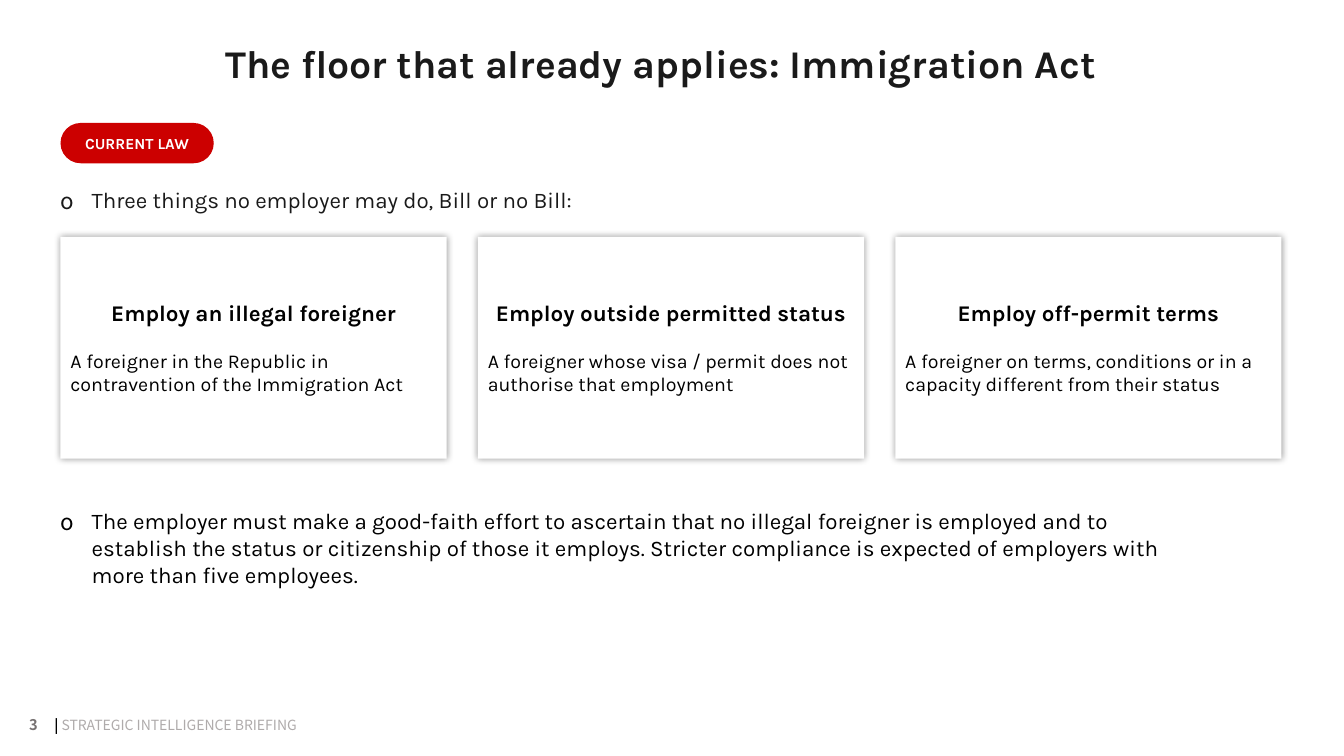
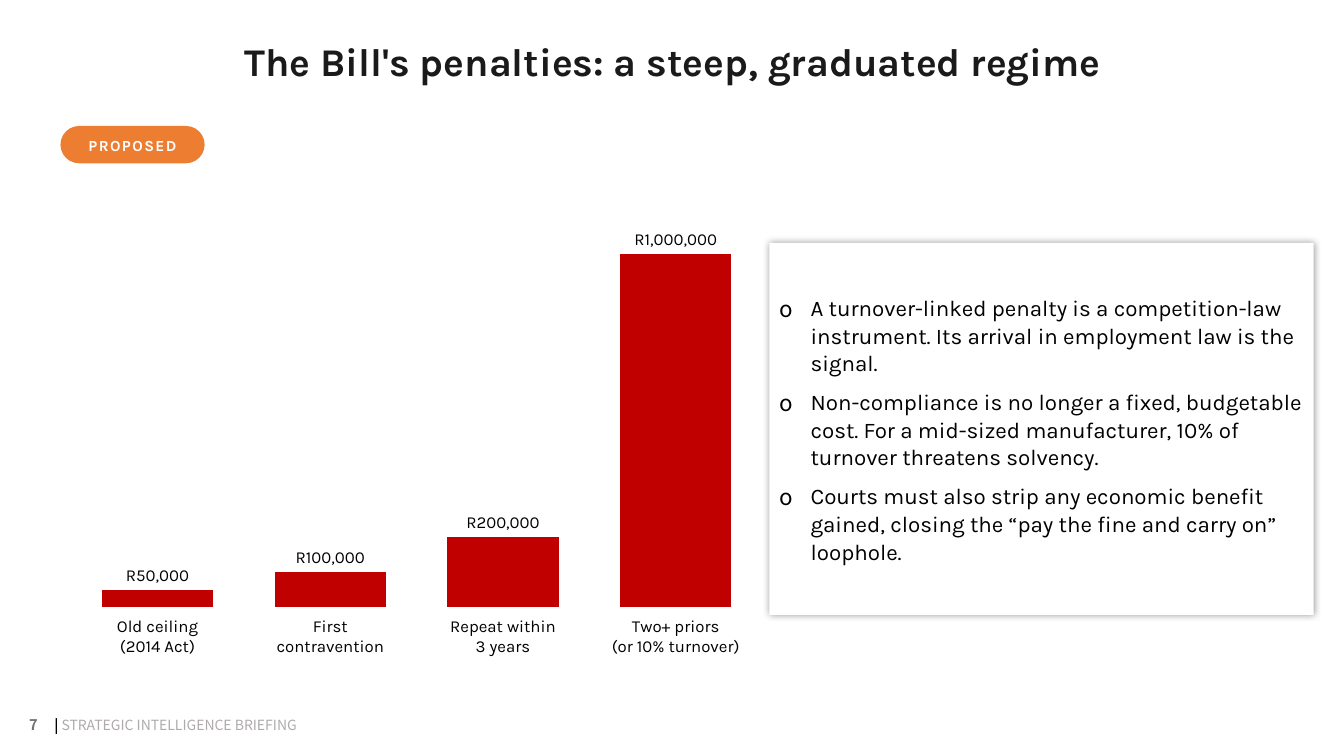
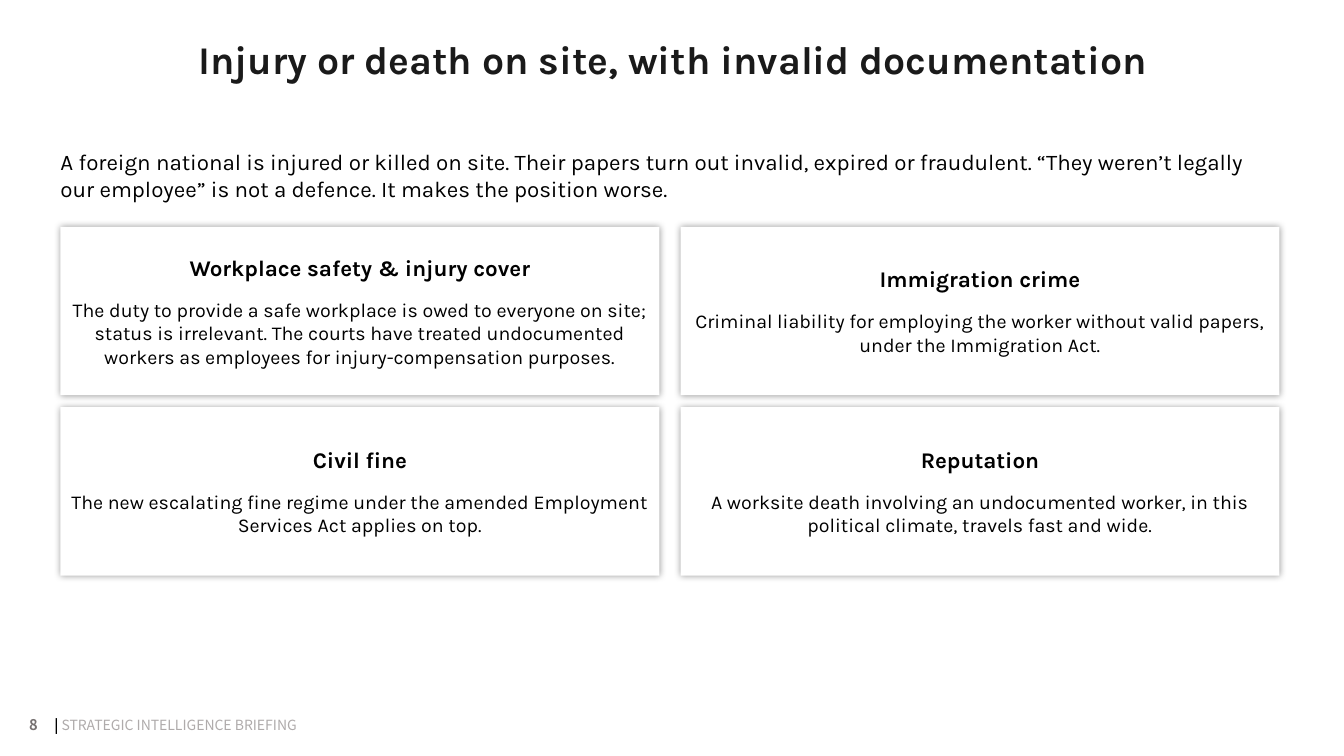
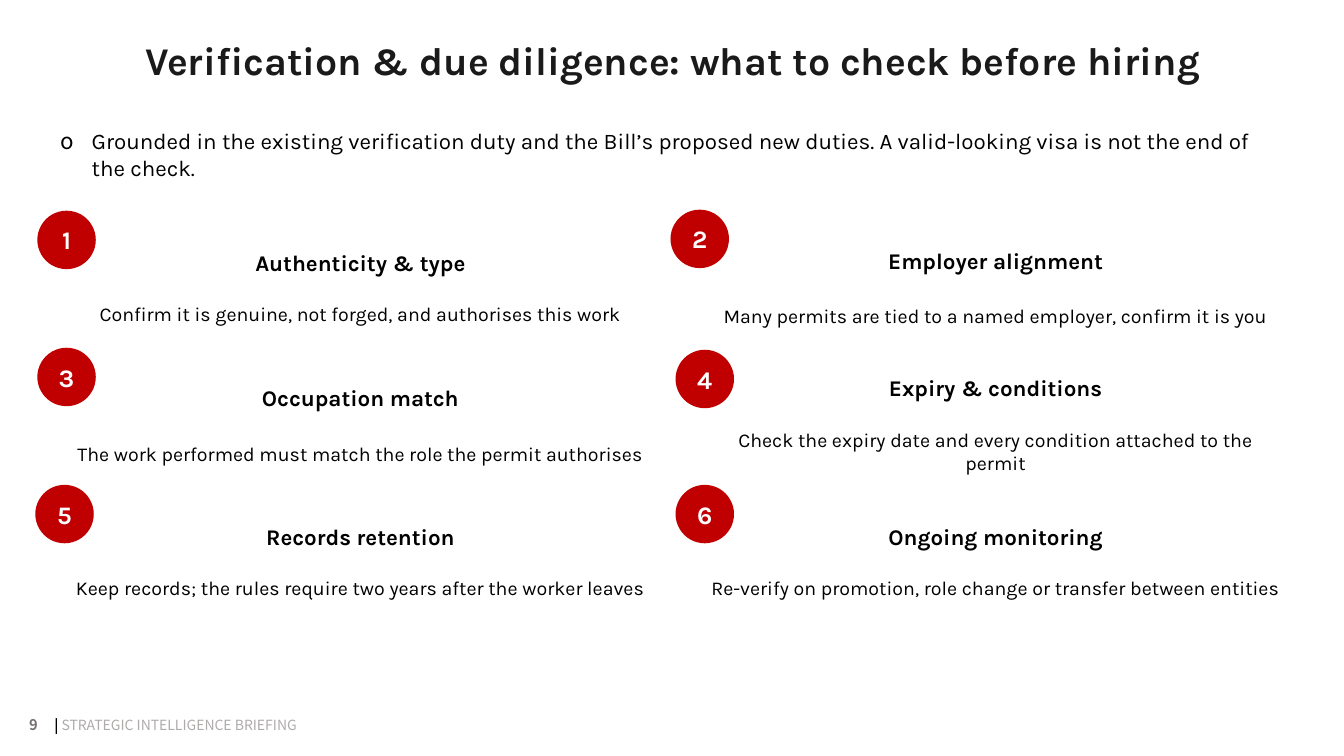
"""Build four slides of a briefing on immigration law duties for employers."""
from pptx import Presentation
from pptx import util as u
from pptx.chart import data as chart_data
from pptx.dml.color import RGBColor
from pptx.enum import chart as charts, shapes, text
from pptx.oxml import ns, parse_xml

PX = 9144
KARLA, NOTO = "Karla", "Noto Sans CJK JP"
WHITE = RGBColor(0xFF, 0xFF, 0xFF)
BLACK = RGBColor(0x00, 0x00, 0x00)
INK = RGBColor(0x1A, 0x1A, 0x1A)
GREY = RGBColor(0x76, 0x71, 0x71)
PALE_GREY = RGBColor(0xAF, 0xAB, 0xAB)
RED = RGBColor(0xCC, 0x00, 0x00)
DARK_RED = RGBColor(0xC0, 0x00, 0x00)
ORANGE = RGBColor(0xED, 0x7D, 0x31)
LEFT, CENTER = text.PP_ALIGN.LEFT, text.PP_ALIGN.CENTER
RECT = shapes.MSO_SHAPE.RECTANGLE
ROUND = shapes.MSO_SHAPE.ROUNDED_RECTANGLE
OVAL = shapes.MSO_SHAPE.OVAL


def write(shape, lines, size, color, bold=False, align=LEFT, font=KARLA, bullet=None,
          before=0, after=0, spacing=None, box=None):
    """Write lines into a shape, and place it with no margins when a box is given."""
    frame = shape.text_frame
    if box:
        shape.left, shape.top, shape.width, shape.height = (v * PX for v in box)
        frame.margin_left = frame.margin_right = frame.margin_top = frame.margin_bottom = 0
    for line in lines:
        paragraph = frame.add_paragraph() if frame.text else frame.paragraphs[0]
        paragraph.text = line
        paragraph.alignment = align
        paragraph.space_before = u.Pt(before)
        paragraph.space_after = u.Pt(0 if line == lines[-1] else after)
        paragraph.line_spacing = spacing
        if bullet is not None:
            props = paragraph._p.get_or_add_pPr()
            props.set("marL", str(31 * PX if bullet else 0))
            props.set("indent", str(-31 * PX if bullet else 0))
            marks = ([f'<a:buFont {ns.nsdecls("a")} typeface="{NOTO}"/>',
                      f'<a:buChar {ns.nsdecls("a")} char="{bullet}"/>'] if bullet
                     else [f'<a:buNone {ns.nsdecls("a")}/>'])
            for mark in marks:
                props.append(parse_xml(mark))
        paragraph.font.name = font
        paragraph.font.size = u.Pt(size)
        paragraph.font.bold = bold
        paragraph.font.color.rgb = color
    frame.word_wrap = True
    frame.auto_size = text.MSO_AUTO_SIZE.NONE


def paint(shape, color, shadowed=False):
    """Fill a shape without an outline, with a soft shadow on request."""
    shape.fill.solid()
    shape.fill.fore_color.rgb = color
    shape.line.fill.background()
    shape.shadow.inherit = False
    if shadowed:
        shape.element.spPr.find(ns.qn("a:effectLst")).append(parse_xml(
            f'<a:outerShdw {ns.nsdecls("a")} blurRad="63500" dist="0" dir="0" algn="ctr" '
            'rotWithShape="0"><a:srgbClr val="000000"><a:alpha val="40000"/></a:srgbClr>'
            '</a:outerShdw>'))


prs = Presentation()
prs.slide_width, prs.slide_height = 1333 * PX, 750 * PX

TITLES = [
    (3, 3, 50, 27, "The floor that already applies: Immigration Act"),
    (7, 1, 62, 25, "The Bill's penalties: a steep, graduated regime"),
    (8, 1, 62, 23, "Injury or death on site, with invalid documentation"),
    (9, 1, 62, 24, "Verification & due diligence: what to check before hiring"),
]
for number, layout, x, y, title in TITLES:
    slide = prs.slides.add_slide(prs.slide_layouts[layout])
    write(slide.shapes.title, [title], 28, INK, True, CENTER, box=(x, y, 1210, 70))
    slide.shapes.title.text_frame.vertical_anchor = text.MSO_ANCHOR.MIDDLE
    page = slide.shapes.add_textbox(19 * PX, 705 * PX, 49 * PX, 29 * PX)
    write(page, [str(number)], 10.5, GREY, True, font=NOTO)
floor, penalties, injury, checks = prs.slides

footer = floor.shapes.add_textbox(44 * PX, 706 * PX, 423 * PX, 27 * PX)
footer.text_frame.word_wrap = True
footer_line = footer.text_frame.paragraphs[0]
footer_line.font.name, footer_line.font.size = NOTO, u.Pt(10)
for words, color, bold in [("| ", BLACK, True), ("STRATEGIC INTELLIGENCE BRIEFING", PALE_GREY, False)]:
    run = footer_line.add_run()
    run.text, run.font.bold, run.font.color.rgb = words, bold, color
footer.element.nvSpPr.cNvPr.set("id", "20")
prs.slide_master.shapes.element.append(footer.element)

BODIES = [
    (floor, 1, (60, 178, 1200, 40), INK, "o", "Three things no employer may do, Bill or no Bill:"),
    (floor, 2, (60, 496, 1121, 94), BLACK, "o",
     "The employer must make a good-faith effort to ascertain that no illegal foreigner is employed "
     "and to establish the status or citizenship of those it employs. Stricter compliance is expected "
     "of employers with more than five employees."),
    (injury, 1, (60, 136, 1185, 75), BLACK, "",
     "A foreign national is injured or killed on site. Their papers turn out invalid, expired or "
     "fraudulent. “They weren’t legally our employee” is not a defence. It makes the position worse."),
    (checks, 1, (60, 130, 1210, 45), BLACK, "o",
     "Grounded in the existing verification duty and the Bill’s proposed new duties. A valid-looking "
     "visa is not the end of the check."),
]
for slide, index, box, color, bullet, words in BODIES:
    body = slide.placeholders[index]
    write(body, [words], 16, color, bullet=bullet, box=box)
    body.text_frame.vertical_anchor = text.MSO_ANCHOR.MIDDLE

for slide, y, w, h, color, status, tracking in [
        (floor, 122, 152, 40, RED, "CURRENT LAW", 0), (penalties, 125, 143, 37, ORANGE, "PROPOSED", 100)]:
    pill = slide.shapes.add_shape(ROUND, 60 * PX, y * PX, w * PX, h * PX)
    pill.adjustments[0] = 0.5
    paint(pill, color)
    write(pill, [status], 11, WHITE, True, CENTER)
    pill.text_frame.vertical_anchor = text.MSO_ANCHOR.TOP
    pill.text_frame.paragraphs[0].runs[0]._r.get_or_add_rPr().set("spc", str(tracking))

PROHIBITIONS = [
    ("Employ an illegal foreigner", "A foreigner in the Republic in contravention of the Immigration Act"),
    ("Employ outside permitted status", "A foreigner whose visa / permit does not authorise that employment"),
    ("Employ off-permit terms",
     "A foreigner on terms, conditions or in a capacity different from their status"),
]
EXPOSURES = [
    ("Workplace safety & injury cover",
     "The duty to provide a safe workplace is owed to everyone on site; status is irrelevant. The courts "
     "have treated undocumented workers as employees for injury-compensation purposes."),
    ("Immigration crime",
     "Criminal liability for employing the worker without valid papers, under the Immigration Act."),
    ("Civil fine", "The new escalating fine regime under the amended Employment Services Act applies on top."),
    ("Reputation",
     "A worksite death involving an undocumented worker, in this political climate, travels fast and wide."),
]
CHECKS = [
    (37, 209, 19, "Authenticity & type", "Confirm it is genuine, not forged, and authorises this work"),
    (665, 208, 22, "Employer alignment", "Many permits are tied to a named employer, confirm it is you"),
    (37, 345, 22, "Occupation match", "The work performed must match the role the permit authorises"),
    (670, 347, 19, "Expiry & conditions", "Check the expiry date and every condition attached to the permit"),
    (35, 481, 19, "Records retention", "Keep records; the rules require two years after the worker leaves"),
    (670, 481, 19, "Ongoing monitoring", "Re-verify on promotion, role change or transfer between entities"),
]
panels = []
for i, (heading, detail) in enumerate(PROHIBITIONS):
    panels.append((floor.shapes, RECT, (60 + 414 * i, 235, 383, 220), heading, detail, 16, LEFT))
for i, (heading, detail) in enumerate(EXPOSURES):
    box = (60 + 615 * (i % 2), 225 + 179 * (i // 2), 594, 167)
    panels.append((injury.shapes, RECT, box, heading, detail, 12, CENTER))
groups = []
for i, (_, _, gap, heading, detail) in enumerate(CHECKS):
    groups.append(checks.shapes.add_group_shape())
    box = (60 + 630 * (i % 2), 226 + 136 * (i // 2), 595, 118)
    panels.append((groups[i].shapes, ROUND, box, heading, detail, gap, CENTER))

for holder, kind, box, heading, detail, gap, align in panels:
    panel = holder.add_shape(kind, *(v * PX for v in box))
    if kind == ROUND:
        panel.adjustments[0] = 0.06
    paint(panel, WHITE, kind == RECT)
    write(panel, [heading], 16, BLACK, True, CENTER)
    write(panel, [detail], 14, BLACK, align=align, before=gap)
    panel.text_frame.vertical_anchor = text.MSO_ANCHOR.MIDDLE

for step, (x, y, *_) in enumerate(CHECKS, 1):
    badge = groups[step - 1].shapes.add_shape(OVAL, x * PX, y * PX, 58 * PX, 58 * PX)
    paint(badge, DARK_RED)
    write(badge, [str(step)], 18, WHITE, True, CENTER)
    badge.text_frame.vertical_anchor = text.MSO_ANCHOR.MIDDLE

fines = chart_data.CategoryChartData()
fines.categories = ["Old ceiling\n(2014 Act)", "First\ncontravention", "Repeat within\n3 years",
                    "Two+ priors\n(or 10% turnover)"]
fines.add_series("Fine", [50000, 100000, 200000, 1000000])
chart = penalties.shapes.add_chart(charts.XL_CHART_TYPE.COLUMN_CLUSTERED, 60 * PX, 178 * PX,
                                   703 * PX, 496 * PX, fines).chart
chart.has_legend = chart.has_title = False
chart.font.name, chart.font.size, chart.font.color.rgb = KARLA, u.Pt(12), BLACK
chart.value_axis.visible = False
chart.value_axis.has_major_gridlines = False
chart.value_axis.minimum_scale, chart.value_axis.maximum_scale = 0, 1200000
chart.category_axis.format.line.fill.background()
chart.category_axis.tick_label_position = charts.XL_TICK_LABEL_POSITION.LOW
columns = chart.plots[0]
columns.gap_width = 55
columns.vary_by_categories = False
columns.series[0].format.fill.solid()
columns.series[0].format.fill.fore_color.rgb = DARK_RED
columns.has_data_labels = True
labels = columns.data_labels
labels.show_value = True
labels.position = charts.XL_LABEL_POSITION.OUTSIDE_END
labels.number_format, labels.number_format_is_linked = '"R"#,##0', False
plot_area = chart.element.find(".//" + ns.qn("c:plotArea"))
for automatic in plot_area.findall(ns.qn("c:layout")):
    plot_area.remove(automatic)
plot_area.insert(0, parse_xml(
    f'<c:layout {ns.nsdecls("c")}><c:manualLayout><c:layoutTarget val="inner"/>'
    '<c:xMode val="edge"/><c:yMode val="edge"/><c:x val="0.015"/><c:y val="0.008"/>'
    '<c:w val="0.975"/><c:h val="0.848"/></c:manualLayout></c:layout>'))

meaning = penalties.placeholders[1]
write(meaning, [
    "A turnover-linked penalty is a competition-law instrument. Its arrival in employment law is the signal.",
    "Non-compliance is no longer a fixed, budgetable cost. For a mid-sized manufacturer, 10% of turnover "
    "threatens solvency.",
    "Courts must also strip any economic benefit gained, closing the “pay the fine and carry on” loophole.",
], 16, BLACK, bullet="o", after=8, spacing=1.03, box=(763, 241, 540, 369))
meaning.text_frame.margin_left = meaning.text_frame.margin_right = 10 * PX
meaning.text_frame.vertical_anchor = text.MSO_ANCHOR.MIDDLE
paint(meaning, WHITE, True)
penalties.shapes.element.append(meaning.element)

prs.save("out.pptx")
